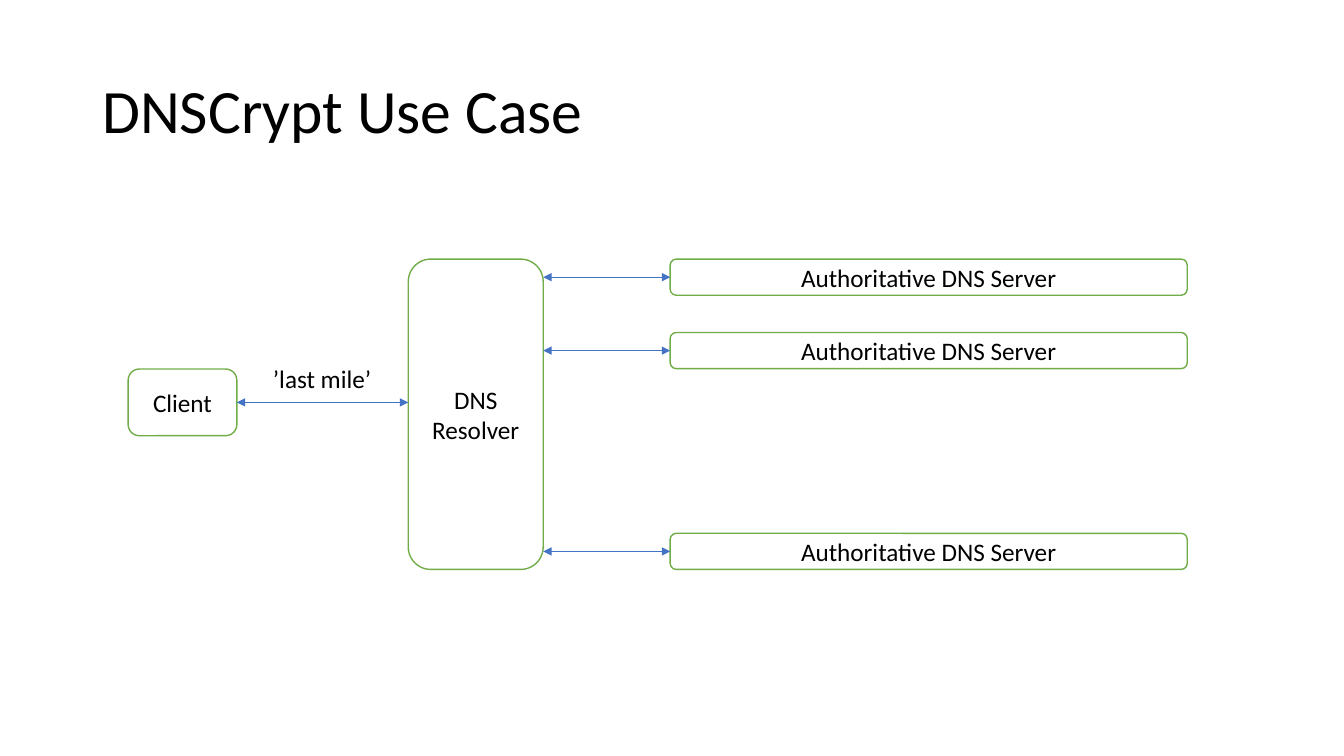
from lxml import etree
from pptx import Presentation
from pptx.dml.color import RGBColor
from pptx.enum.shapes import MSO_CONNECTOR, MSO_SHAPE
from pptx.enum.text import MSO_ANCHOR, MSO_AUTO_SIZE, PP_ALIGN
from pptx.oxml.ns import qn
from pptx.util import Cm, Pt

ROUNDED = MSO_SHAPE.ROUNDED_RECTANGLE
STRAIGHT = MSO_CONNECTOR.STRAIGHT
MIDDLE, TOP = MSO_ANCHOR.MIDDLE, MSO_ANCHOR.TOP
CENTER, LEFT = PP_ALIGN.CENTER, PP_ALIGN.LEFT
FIT_TEXT = MSO_AUTO_SIZE.SHAPE_TO_FIT_TEXT
LEFT_SIDE, RIGHT_SIDE = 1, 3


def color(value):
    return RGBColor.from_string(value)


class Diagram:
    font = "Calibri"
    text_color = "000000"
    box_fill = "FFFFFF"
    box_line = "70AD47"
    arrow_color = "4472C4"

    def __init__(self, slide):
        self.s = slide

    def set_text(self, tf, text, size=18, align=CENTER, anchor=MIDDLE, spacing=1.0):
        tf.text = text
        tf.vertical_anchor = anchor
        for p in tf.paragraphs:
            p.alignment = align
            p.line_spacing = spacing
            for r in p.runs:
                r.font.name = self.font
                r.font.size = Pt(size)
                r.font.color.rgb = color(self.text_color)

    def label(self, text, x, y, w, h, wrap=True, **style):
        sp = self.s.shapes.add_textbox(Cm(x), Cm(y), Cm(w), Cm(h))
        tf = sp.text_frame
        tf.word_wrap = wrap
        if not wrap:
            tf.auto_size = FIT_TEXT
        self.set_text(tf, text, align=LEFT, **style)

    def box(self, text, x, y, w, h):
        sp = self.s.shapes.add_shape(ROUNDED, Cm(x), Cm(y), Cm(w), Cm(h))
        sp.shadow.inherit = False
        sp.fill.solid()
        sp.fill.fore_color.rgb = color(self.box_fill)
        sp.line.color.rgb = color(self.box_line)
        sp.line.width = Pt(1)
        sp.text_frame.word_wrap = True
        self.set_text(sp.text_frame, text)
        return sp

    def arrow(self, x1, x2, y):
        """Draw a horizontal connector with a head at each end."""
        cxn = self.s.shapes.add_connector(STRAIGHT, Cm(x1), Cm(y), Cm(x2), Cm(y))
        cxn.line.color.rgb = color(self.arrow_color)
        cxn.line.width = Pt(0.5)
        sp_pr = cxn.element.spPr
        ln = sp_pr.find(qn("a:ln"))
        for end in ("a:headEnd", "a:tailEnd"):
            etree.SubElement(ln, qn(end), type="triangle")
        etree.SubElement(sp_pr, qn("a:effectLst"))
        return cxn


def main():
    prs = Presentation()
    prs.slide_width, prs.slide_height = Cm(33.87), Cm(19.05)
    d = Diagram(prs.slides.add_slide(prs.slide_layouts[6]))

    d.label("DNSCrypt Use Case", 2.33, 1.02, 29.21, 3.68,
            size=44, anchor=MIDDLE, spacing=0.9)

    client_x, client_y, client_w, client_h = 3.23, 9.3, 2.74, 1.68
    resolver_x, resolver_y, resolver_w, resolver_h = 10.29, 6.53, 3.4, 7.82
    server_x, server_w, server_h = 16.89, 13.03, 0.91
    server_tops = (resolver_y, 8.38, resolver_y + resolver_h - server_h)

    client = d.box("Client", client_x, client_y, client_w, client_h)
    d.box("DNS\nResolver", resolver_x, resolver_y, resolver_w, resolver_h)
    servers = [d.box("Authoritative DNS Server", server_x, y, server_w, server_h)
               for y in server_tops]

    last_mile = d.arrow(client_x + client_w, resolver_x, client_y + client_h / 2)
    last_mile.begin_connect(client, RIGHT_SIDE)
    for server, y in zip(servers, server_tops):
        query = d.arrow(resolver_x + resolver_w, server_x, y + server_h / 2)
        query.end_connect(server, LEFT_SIDE)

    d.label("’last mile’", 6.63, 9.02, 3, 1.02, wrap=False, anchor=TOP)

    prs.save("out.pptx")


if __name__ == "__main__":
    main()
